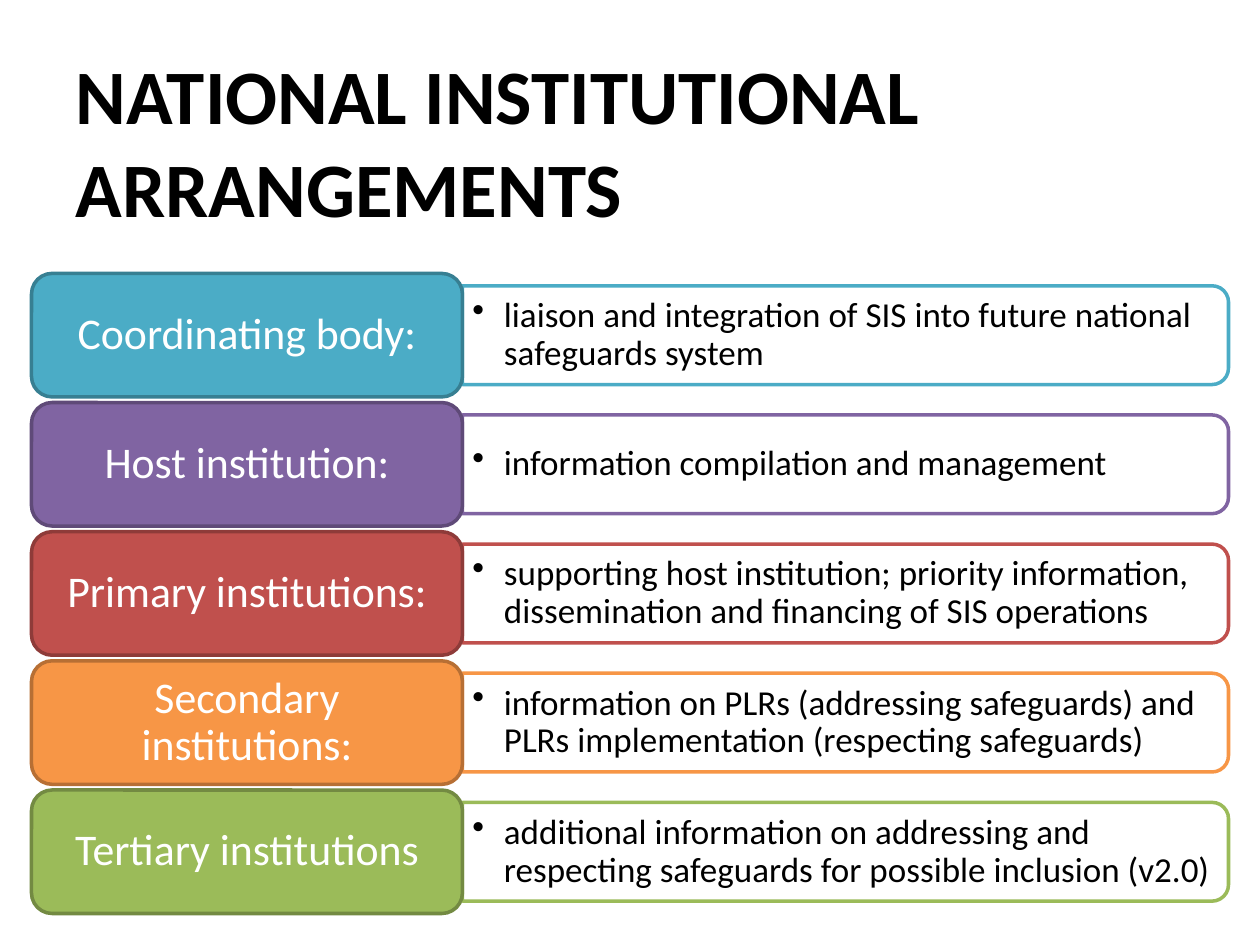
from lxml.etree import SubElement
from pptx import Presentation
from pptx.dml.color import RGBColor
from pptx.enum.shapes import MSO_SHAPE
from pptx.enum.text import MSO_ANCHOR, MSO_AUTO_SIZE, PP_ALIGN
from pptx.oxml.ns import qn
from pptx.util import Inches, Pt

WIDE, HIGH = 10, 7.5
LEFT, SPLIT, RIGHT = 0.25, 3.67, 9.75
TOP, END, TALL = 2.17, 7.25, 0.98

ROWS = [
    ("Coordinating body:", "4BACC6", "377F92",
     "liaison and integration of SIS into future national safeguards system"),
    ("Host institution:", "8064A2", "5F4A78",
     "information compilation and management"),
    ("Primary institutions:", "C0504D", "8E3B39",
     "supporting host institution; priority information, "
     "dissemination and financing of SIS operations"),
    ("Secondary institutions:", "F79646", "B76F34",
     "information on PLRs (addressing safeguards) and "
     "PLRs implementation (respecting safeguards)"),
    ("Tertiary institutions", "9BBB59", "738A42",
     "additional information on addressing and "
     "respecting safeguards for possible inclusion (v2.0)"),
]
STEP = (END - TOP - TALL) / (len(ROWS) - 1)


def tint(code):
    return RGBColor.from_string(code)


class Deck:
    """Holds the text style and the current slide."""
    font = "Calibri"

    def __init__(self):
        self.show = Presentation()
        self.show.slide_width = Inches(WIDE)
        self.show.slide_height = Inches(HIGH)
        self.page = self.show.slides.add_slide(self.show.slide_layouts[5])
        self.group = self.page.shapes.add_group_shape()

    def add_text(self, para, text, size, color, bold=False):
        run = para.add_run()
        run.text = text
        run.font.name, run.font.size, run.font.bold = self.font, Pt(size), bold
        run.font.color.rgb = tint(color)

    def frame(self, shape, side, edge):
        """Set wrapping, middle anchor and insets; return the first paragraph."""
        frame = shape.text_frame
        frame.word_wrap = True
        frame.vertical_anchor = MSO_ANCHOR.MIDDLE
        frame.margin_left = frame.margin_right = Inches(side)
        frame.margin_top = frame.margin_bottom = Inches(edge)
        para = frame.paragraphs[0]
        para.line_spacing = 0.9
        return para

    def title(self, text):
        box = self.page.shapes.title
        box.left, box.top = Inches(0.5), Inches(0.33)
        box.width, box.height = Inches(9), Inches(1.08)
        frame = box.text_frame
        frame.auto_size = MSO_AUTO_SIZE.NONE
        frame.vertical_anchor = MSO_ANCHOR.TOP
        para = frame.paragraphs[0]
        para.alignment = PP_ALIGN.LEFT
        self.add_text(para, text, 44, "000000", True)

    def block(self, kind, mid, size, fill, line):
        """Add a preset shape around its middle point."""
        (x, y), (w, h) = mid, size
        shape = self.group.shapes.add_shape(
            kind, Inches(x - w / 2), Inches(y - h / 2), Inches(w), Inches(h))
        shape.shadow.inherit = False
        shape.fill.solid()
        shape.fill.fore_color.rgb = tint(fill)
        shape.line.color.rgb = tint(line)
        shape.line.width = Pt(2)
        return shape

    def panel(self, y, color):
        """Add a bar whose right-hand corners are round."""
        mid = (SPLIT + RIGHT) / 2, y
        size = TALL * 0.8, RIGHT - SPLIT
        bar = self.block(MSO_SHAPE.ROUND_2_SAME_RECTANGLE, mid, size,
                         "FFFFFF", color)
        bar.rotation = 90

    def point(self, y, text):
        high = 0.71
        box = self.group.shapes.add_textbox(
            Inches(SPLIT), Inches(y - high / 2), Inches(6.04), Inches(high))
        para = self.frame(box, 0.08, 0.04)
        para.level = 1
        props = para._p.get_or_add_pPr()
        props.set("marL", str(Inches(0.25)))
        props.set("indent", str(-Inches(0.25)))
        SubElement(props, qn("a:buChar")).set("char", "•")
        self.add_text(para, text, 20, "000000")

    def label(self, y, text, fill, line):
        mid = (LEFT + SPLIT) / 2, y
        size = SPLIT - LEFT, TALL
        box = self.block(MSO_SHAPE.ROUNDED_RECTANGLE, mid, size, fill, line)
        para = self.frame(box, 0.1, 0.05)
        para.alignment = PP_ALIGN.CENTER
        self.add_text(para, text, 25, "FFFFFF")


def main():
    deck = Deck()
    deck.title("NATIONAL INSTITUTIONAL ARRANGEMENTS")
    for i, (name, fill, line, duty) in enumerate(ROWS):
        y = TOP + TALL / 2 + i * STEP
        deck.panel(y, fill)
        deck.point(y, duty)
        deck.label(y, name, fill, line)
    deck.show.save("out.pptx")


if __name__ == "__main__":
    main()
